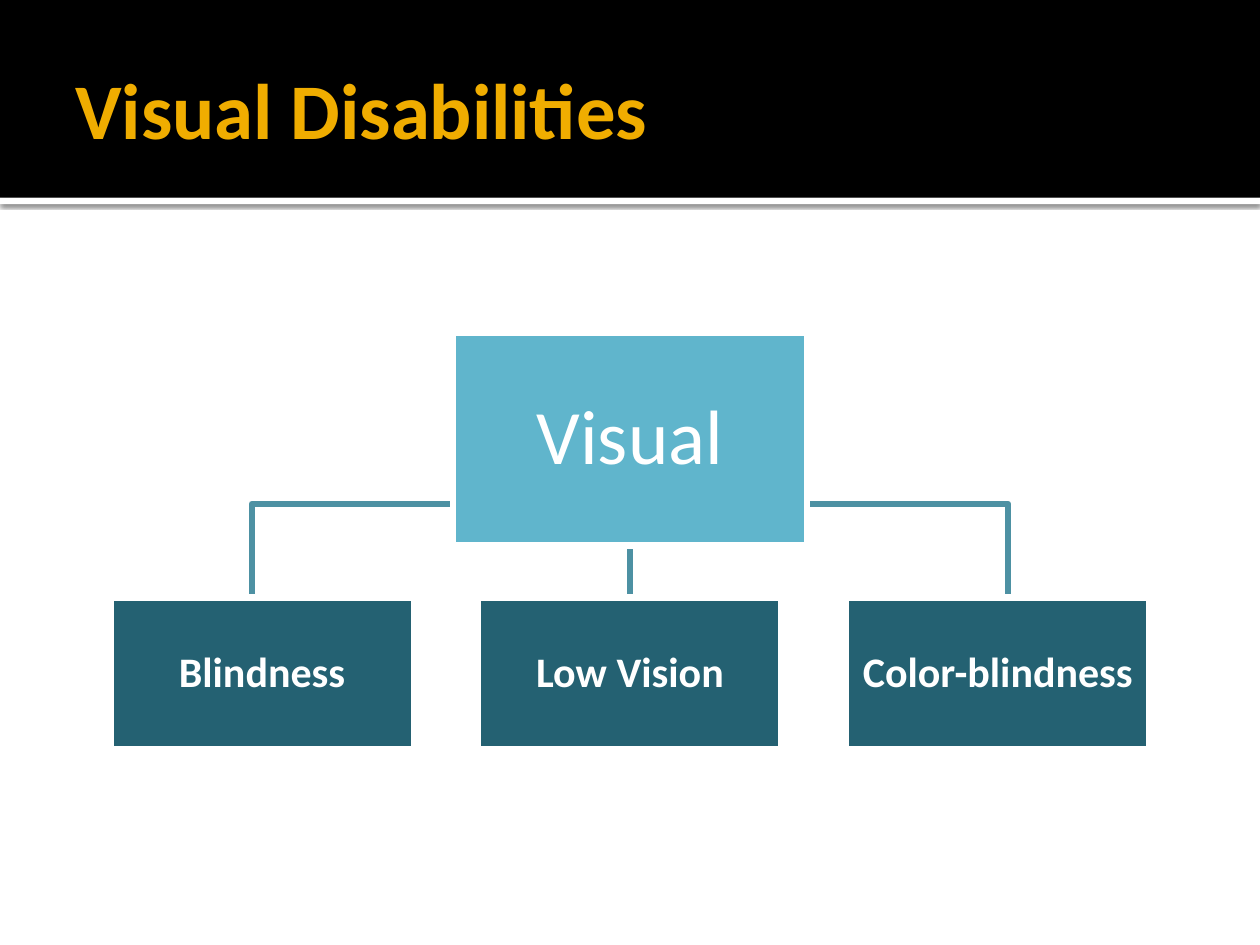
from lxml.etree import SubElement
from pptx import Presentation
from pptx.dml.color import RGBColor
from pptx.enum.shapes import MSO_CONNECTOR, MSO_SHAPE
from pptx.enum.text import MSO_ANCHOR, PP_ALIGN
from pptx.oxml import parse_xml
from pptx.oxml.ns import nsdecls, qn
from pptx.util import Inches, Pt

COLORS = {
    "band": "000000",
    "paper": "FFFFFF",
    "title": "F0AD00",
    "root": "60B5CC",
    "branch": "246172",
    "link": "4D91A3",
}
FONT = "Calibri"
WIDTH, HEIGHT = 10, 7.5
CENTER = WIDTH / 2
LINE_WIDTH = 3.78

# Tree grid: one root above equally spaced branches
BRANCHES = ["Blindness", "Low Vision", "Color-blindness"]
BRANCH_WIDTH, BRANCH_HEIGHT = 2.41, 1.21
PITCH = 2.92
ROOT_TOP, ROOT_WIDTH, ROOT_HEIGHT = 2.64, 2.81, 1.69
LINK_TOP, LINK_BEND, BRANCH_TOP = 4.23, 4.49, 4.74


def color(name):
    return RGBColor.from_string(COLORS[name])


def style_line(line, name):
    line.color.rgb = color(name)
    line.width = Pt(LINE_WIDTH)


def add_block(slide, left, top, width, height, fill):
    block = slide.shapes.add_shape(
        MSO_SHAPE.RECTANGLE, Inches(left), Inches(top), Inches(width), Inches(height))
    block.shadow.inherit = False
    block.fill.solid()
    block.fill.fore_color.rgb = color(fill)
    block.line.fill.background()
    return block


def write(frame, text, size, name, bold, insets):
    frame.word_wrap = True
    frame.vertical_anchor = MSO_ANCHOR.MIDDLE
    frame.margin_left, frame.margin_top, frame.margin_right, frame.margin_bottom = map(
        Inches, insets)
    frame.text = text
    font = frame.paragraphs[0].runs[0].font
    font.name, font.size, font.bold = FONT, Pt(size), bold
    font.color.rgb = color(name)


def add_header(slide):
    rule = add_block(slide, 0, 1.57, WIDTH, 0.05, "paper")
    effects = rule._element.spPr.find(qn("a:effectLst"))
    effects.append(parse_xml(
        f'<a:outerShdw {nsdecls("a")} blurRad="{Pt(2.5)}" dist="{Pt(0.8)}" '
        'dir="5400000" algn="tl" rotWithShape="0">'
        f'<a:srgbClr val="{COLORS["band"]}"><a:alpha val="60000"/></a:srgbClr>'
        '</a:outerShdw>'))
    add_block(slide, 0, 0, WIDTH, 1.57, "band")
    title = slide.shapes.add_textbox(Inches(0.5), Inches(0.17), Inches(9), Inches(1.37))
    write(title.text_frame, "Visual Disabilities", 45, "title", True,
          (0.1, 0.05, 0.05, 0.05))


def add_link(slide, center):
    if center == CENTER:
        link = slide.shapes.add_connector(
            MSO_CONNECTOR.STRAIGHT, Inches(center), Inches(LINK_TOP),
            Inches(center), Inches(BRANCH_TOP))
        SubElement(link._element.spPr, qn("a:effectLst"))
    else:
        outline = slide.shapes.build_freeform(CENTER, LINK_TOP, scale=Inches(1))
        outline.add_line_segments(
            [(CENTER, LINK_BEND), (center, LINK_BEND), (center, BRANCH_TOP)], close=False)
        link = outline.convert_to_shape()
        link.shadow.inherit = False
        link.fill.background()
    style_line(link.line, "link")


def add_node(slide, text, center, top, width, height, fill, size, bold, inset):
    node = add_block(slide, center - width / 2, top, width, height, fill)
    style_line(node.line, "paper")
    write(node.text_frame, text, size, "paper", bold, [inset] * 4)
    paragraph = node.text_frame.paragraphs[0]
    paragraph.alignment = PP_ALIGN.CENTER
    paragraph.line_spacing = 0.9


def add_tree(slide):
    middle = (len(BRANCHES) - 1) / 2
    centers = [CENTER + (i - middle) * PITCH for i in range(len(BRANCHES))]
    # Links lie behind the nodes
    for center in reversed(centers):
        add_link(slide, center)
    for text, center in zip(BRANCHES, centers):
        add_node(slide, text, center, BRANCH_TOP, BRANCH_WIDTH, BRANCH_HEIGHT,
                 "branch", 24, True, 0.02)
    add_node(slide, "Visual", CENTER, ROOT_TOP, ROOT_WIDTH, ROOT_HEIGHT,
             "root", 44, False, 0.18)


def main():
    deck = Presentation()
    deck.slide_width, deck.slide_height = Inches(WIDTH), Inches(HEIGHT)
    slide = deck.slides.add_slide(deck.slide_layouts[6])
    add_header(slide)
    add_tree(slide)
    deck.save("out.pptx")


if __name__ == "__main__":
    main()
